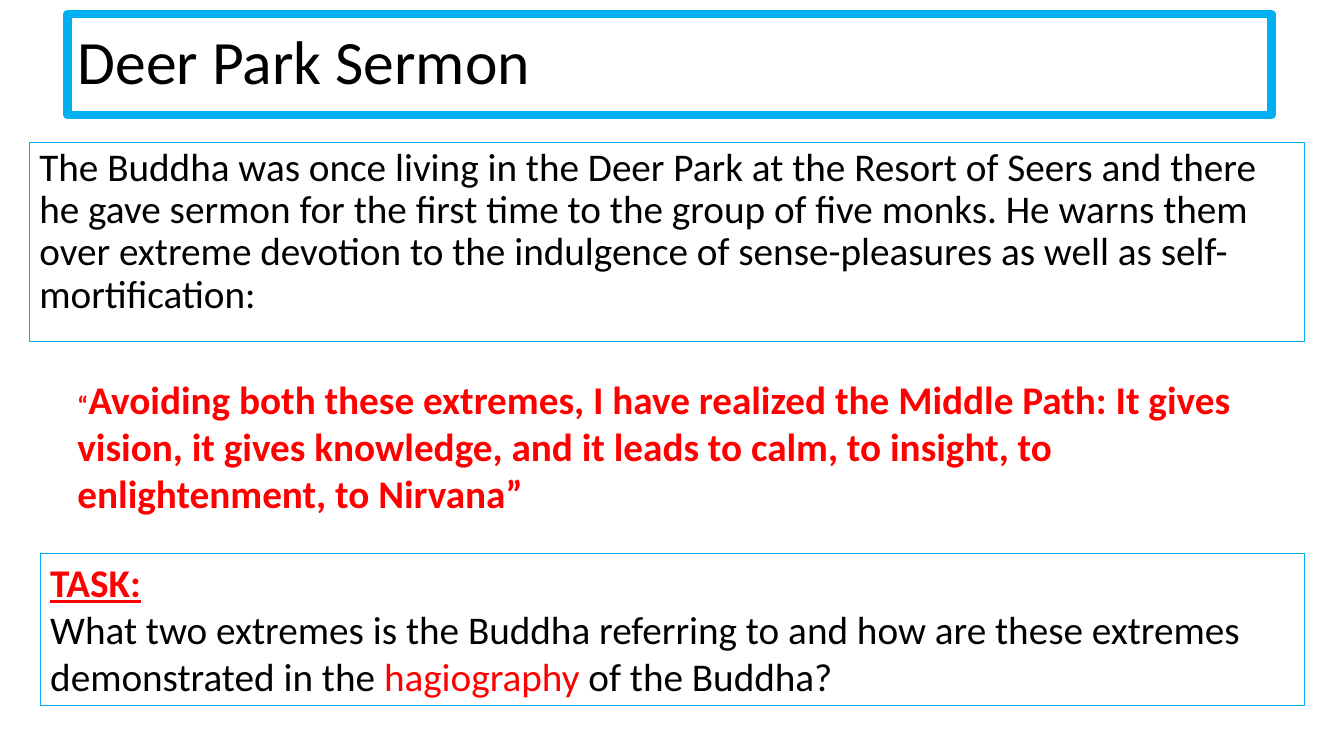
"""Build the Deer Park Sermon slide."""
from dataclasses import dataclass

from lxml.etree import SubElement
from pptx import Presentation
from pptx.dml.color import RGBColor as Color
from pptx.enum.text import MSO_ANCHOR as Anchor, MSO_AUTO_SIZE as Fit, PP_ALIGN as Align
from pptx.oxml.ns import qn
from pptx.util import Inches, Pt


@dataclass(frozen=True)
class Theme:
    face: str = "Calibri"
    ink: Color = Color(0, 0, 0)
    red: Color = Color(255, 0, 0)
    blue: Color = Color(0, 176, 240)
    head: int = 44
    text: int = 28
    small: int = 18
    thick: float = 6
    thin: float = 0.75


look = Theme()
WIDE, HIGH = 13.33, 7.5

TITLE = [[("Deer Park Sermon", {})]]
STORY = [[(
    "The Buddha was once living in the Deer Park at the Resort of Seers and "
    "there he gave sermon for the first time to the group of five monks. "
    "He warns them over extreme devotion to the indulgence of sense-pleasures "
    "as well as self-mortification:", {})]]
QUOTE = [[
    ("“", {"size": Pt(look.small)}),
    ("Avoiding both these extremes, I have realized the Middle Path: It gives "
     "vision, it gives knowledge, and it leads to calm, to insight, to "
     "enlightenment, to Nirvana”", {}),
]]
TASK = [
    [("TASK:", {"bold": True, "underline": True, "red": True})],
    [("What two extremes is the Buddha referring to and how are these extremes "
      "demonstrated in the ", {}),
     ("hagiography", {"red": True}),
     (" of the Buddha?", {})],
]


def place(box, left, top, width, height):
    box.left, box.top = Inches(left), Inches(top)
    box.width, box.height = Inches(width), Inches(height)


def edge(box, weight):
    box.line.color.rgb = look.blue
    box.line.width = Pt(weight)


def write(box, paras, size=look.text, color=look.ink, bold=False,
          lead=1.0, gap=0, fit=Fit.NONE, anchor=Anchor.TOP):
    frame = box.text_frame
    frame.word_wrap = True
    frame.auto_size = fit
    frame.vertical_anchor = anchor
    for i, parts in enumerate(paras):
        para = frame.add_paragraph() if i else frame.paragraphs[0]
        para.alignment = Align.LEFT
        para.line_spacing = lead
        para.space_before = Pt(gap)
        font = para.font
        font.name, font.size, font.bold = look.face, Pt(size), bold
        font.color.rgb = color
        for words, style in parts:
            run = para.add_run()
            run.text = words
            for key, value in style.items():
                if key == "red":
                    run.font.color.rgb = look.red
                else:
                    setattr(run.font, key, value)


def main():
    deck = Presentation()
    deck.slide_width, deck.slide_height = Inches(WIDE), Inches(HIGH)
    slide = deck.slides.add_slide(deck.slide_layouts[1])

    title, story = slide.placeholders
    place(title, 0.67, 0.14, WIDE - 2 * 0.695, 1)
    edge(title, look.thick)
    write(title, TITLE, size=look.head, lead=0.9, anchor=Anchor.MIDDLE)

    right = 12.94
    place(story, 0.29, 1.41, right - 0.29, 1.98)
    edge(story, look.thin)
    write(story, STORY, lead=0.9, gap=10)
    props = story.text_frame.paragraphs[0].font._element.getparent()
    props.set("marL", "0")
    props.set("indent", "0")
    SubElement(props, qn("a:buNone"))
    props.append(props.find(qn("a:defRPr")))

    for paras, left, top, width, color, bold, framed in (
        (QUOTE, 0.67, 3.67, 12.1, look.red, True, False),
        (TASK, 0.4, 5.49, right - 0.4, look.ink, False, True),
    ):
        box = slide.shapes.add_textbox(0, 0, 0, 0)
        place(box, left, top, width, 1.51)
        if framed:
            edge(box, look.thin)
        write(box, paras, color=color, bold=bold, fit=Fit.SHAPE_TO_FIT_TEXT)

    deck.save("out.pptx")


if __name__ == "__main__":
    main()
